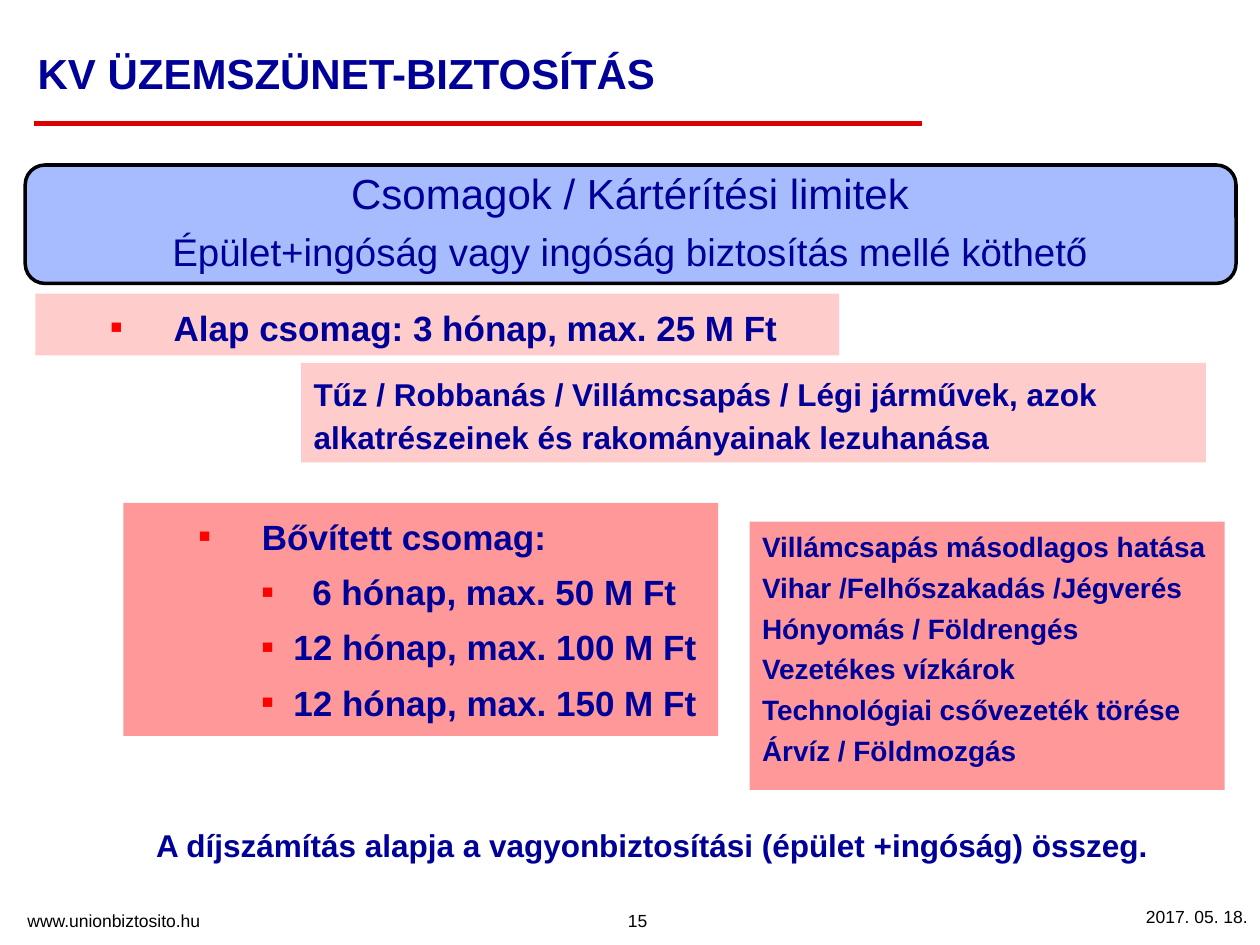
from dataclasses import dataclass
from lxml.etree import SubElement
from pptx import Presentation
from pptx.dml.color import RGBColor
from pptx.enum.shapes import MSO_CONNECTOR, MSO_SHAPE
from pptx.enum.text import MSO_ANCHOR, PP_ALIGN
from pptx.oxml.ns import qn
from pptx.util import Inches, Pt


@dataclass(frozen=True)
class Theme:
    font: str = "Arial"
    navy: str = "000099"
    black: str = "000000"
    rule: str = "DD0000"
    mark: str = "FF0000"
    blue: str = "A7BCFF"
    pale: str = "FFCCCC"
    rose: str = "FF9999"
    title: int = 24
    sub: int = 22
    pack: int = 20
    body: int = 18
    risk: int = 16
    foot: int = 10


T = Theme()
COLS, ROWS = 100, 75
WIDE, HIGH = Inches(10), Inches(7.5)


def col(n):
    return round(WIDE * n / COLS)


def row(n):
    return round(HIGH * n / ROWS)


def area(x, y, w, h):
    return col(x), row(y), col(w), row(h)


def color(code):
    return RGBColor.from_string(code)


def bullet(para, left, hang):
    props = para._p.get_or_add_pPr()
    props.set("marL", str(Inches(left)))
    props.set("indent", str(-Inches(hang)))
    tint = SubElement(props, qn("a:buClr"))
    SubElement(tint, qn("a:srgbClr"), val=T.mark)
    SubElement(props, qn("a:buSzPct"), val="55000")
    SubElement(props, qn("a:buFont"), typeface=T.font)
    SubElement(props, qn("a:buChar"), char="■")


def write(shape, lines, size=T.body, ink=T.navy, bold=True, align=PP_ALIGN.LEFT,
          anchor=MSO_ANCHOR.TOP, lead=1.0, gap=0, wrap=True,
          marks=(), sizes=()):
    frame = shape.text_frame
    frame.word_wrap = wrap
    frame.vertical_anchor = anchor
    for i, line in enumerate(lines):
        para = frame.paragraphs[0] if i == 0 else frame.add_paragraph()
        para.alignment = align
        para.line_spacing = lead
        if i:
            para.space_before = Pt(gap)
        if marks:
            bullet(para, *marks[i])
        run = para.add_run()
        run.text = line
        font = run.font
        font.name, font.bold = T.font, bold
        font.size = Pt(sizes[i] if sizes else size)
        font.color.rgb = color(ink)


def label(slide, spot, lines, **style):
    write(slide.shapes.add_textbox(*area(*spot)), lines, **style)


def panel(slide, spot, fill, kind=MSO_SHAPE.RECTANGLE, edge=None):
    shape = slide.shapes.add_shape(kind, *area(*spot))
    shape.shadow.inherit = False
    shape.fill.solid()
    shape.fill.fore_color.rgb = color(fill)
    if edge:
        shape.line.color.rgb = color(edge)
        shape.line.width = Pt(2)
    else:
        shape.line.fill.background()
    return shape


def rule(slide, start, end, y):
    line = slide.shapes.add_connector(
        MSO_CONNECTOR.STRAIGHT, col(start), row(y), col(end), row(y))
    line.line.color.rgb = color(T.rule)
    line.line.width = Pt(2.5)
    SubElement(line._element.spPr, qn("a:effectLst"))


def footer(slide):
    style = dict(size=T.foot, ink=T.black, bold=False)
    label(slide, (34.5, 69, 32.2, 5.4), ["15"], align=PP_ALIGN.CENTER,
          anchor=MSO_ANCHOR.BOTTOM, **style)
    label(slide, (1.2, 71.7, 26, 2.7), ["www.unionbiztosito.hu"], **style)
    label(slide, (81.5, 71.4, 18.5, 2.7), ["2017. 05. 18."],
          align=PP_ALIGN.RIGHT, **style)


def header(slide):
    rule(slide, 2.7, 73.2, 9.8)
    label(slide, (2, 2.8, 71.2, 6.7), ["KV ÜZEMSZÜNET-BIZTOSÍTÁS"],
          size=T.title, lead=0.8, anchor=MSO_ANCHOR.MIDDLE)
    panel(slide, (2, 13.1, 96.1, 9.4), T.blue,
          MSO_SHAPE.ROUNDED_RECTANGLE, T.black)
    label(slide, (2.4, 13.5, 95.2, 8.5),
          ["Csomagok / Kártérítési limitek",
           "Épület+ingóság vagy ingóság biztosítás mellé köthető"],
          sizes=(T.title, T.sub), bold=False, lead=0.9, gap=8.4,
          align=PP_ALIGN.CENTER, anchor=MSO_ANCHOR.MIDDLE)


def packs(slide):
    main, item, short = (1, 0.5), (1.25, 0.25), (1.4, 0.4)
    style = dict(size=T.pack, lead=1.15, gap=4)
    write(panel(slide, (2.8, 23.3, 63.8, 4.9), T.pale),
          ["Alap csomag: 3 hónap, max. 25 M Ft"], marks=[main], **style)
    write(panel(slide, (9.8, 39.9, 47.2, 18.5), T.rose),
          ["Bővített csomag:", "6 hónap, max. 50 M Ft",
           "12 hónap, max. 100 M Ft", "12 hónap, max. 150 M Ft"],
          marks=[main, short, item, item], **style)


def risks(slide):
    write(panel(slide, (23.9, 28.8, 71.8, 7.9), T.pale),
          ["Tűz / Robbanás / Villámcsapás / Légi járművek, azok "
           "alkatrészeinek és rakományainak lezuhanása"], lead=1.15)
    write(panel(slide, (59.5, 41.4, 37.7, 21.3), T.rose),
          ["Villámcsapás másodlagos hatása", "Vihar /Felhőszakadás /Jégverés",
           "Hónyomás / Földrengés", "Vezetékes vízkárok",
           "Technológiai csővezeték törése", "Árvíz / Földmozgás"],
          size=T.risk, lead=1.05, gap=3.2)


def main():
    deck = Presentation()
    deck.slide_width, deck.slide_height = WIDE, HIGH
    slide = deck.slides.add_slide(deck.slide_layouts[6])
    footer(slide)
    header(slide)
    packs(slide)
    risks(slide)
    label(slide, (11.4, 65.1, 81.5, 4),
          ["A díjszámítás alapja a vagyonbiztosítási (épület +ingóság) összeg."],
          wrap=False)
    deck.save("out.pptx")


if __name__ == "__main__":
    main()
